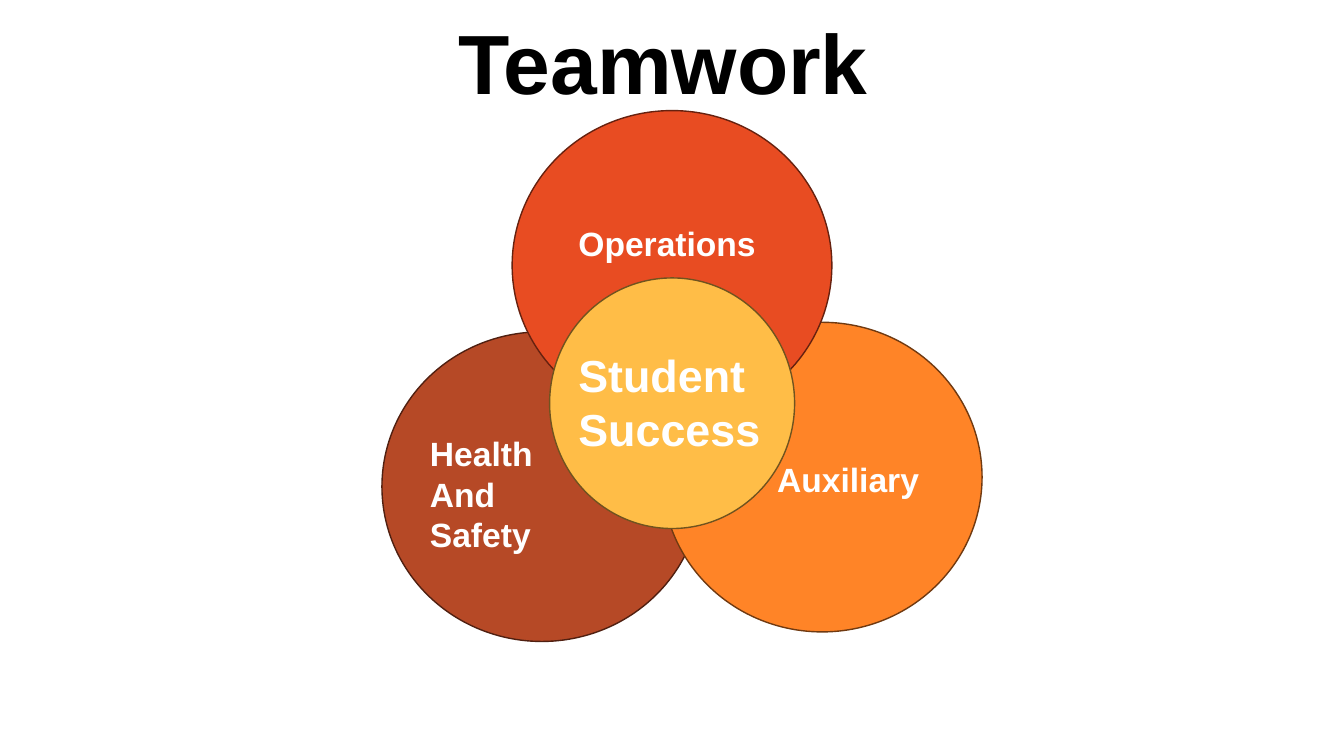
from dataclasses import dataclass

from pptx import Presentation
from pptx.dml.color import RGBColor
from pptx.enum.shapes import MSO_SHAPE
from pptx.enum.text import MSO_ANCHOR, PP_ALIGN
from pptx.util import Pt

OVAL = MSO_SHAPE.OVAL
TOP, MIDDLE = MSO_ANCHOR.TOP, MSO_ANCHOR.MIDDLE
LEFT, CENTER = PP_ALIGN.LEFT, PP_ALIGN.CENTER


@dataclass(frozen=True)
class Theme:
    font: str = "Arial"
    black: str = "000000"
    white: str = "FFFFFF"
    brown: tuple = ("B64926", "502011")
    orange: tuple = ("FF8427", "703A11")
    red: tuple = ("E84C22", "66210F")
    gold: tuple = ("FFBD47", "70531F")
    title: int = 60
    core: int = 32
    label: int = 24


theme = Theme()
deck = Presentation()
deck.slide_width, deck.slide_height = Pt(960), Pt(540)
slide = deck.slides.add_slide(deck.slide_layouts[6])


def add_text(text, box, size=theme.label, color=theme.white, align=LEFT,
             anchor=TOP, spacing=1.0):
    """Add a bold text box; each line of text becomes a paragraph."""
    frame = slide.shapes.add_textbox(*map(Pt, box)).text_frame
    frame.word_wrap = True
    frame.vertical_anchor = anchor
    frame.text = text
    for para in frame.paragraphs:
        para.alignment = align
        para.line_spacing = spacing
        para.font.name = theme.font
        para.font.size = Pt(size)
        para.font.bold = True
        para.font.color.rgb = RGBColor.from_string(color)


add_text("Teamwork", (0, 0.7, 947.5, 94.3), size=theme.title,
         color=theme.black, align=CENTER, anchor=MIDDLE, spacing=0.9)

# Circles from back to front
team = (228.4, 221.2)
circles = [
    ((272.8, 237), team, theme.brown),
    ((473.1, 230.2), team, theme.orange),
    ((365.8, 79), team, theme.red),
    ((392.6, 198.5), (175, 179), theme.gold),
]
for place, size, (fill, edge) in circles:
    circle = slide.shapes.add_shape(OVAL, *map(Pt, place + size))
    circle.shadow.inherit = False
    circle.fill.solid()
    circle.fill.fore_color.rgb = RGBColor.from_string(fill)
    circle.line.color.rgb = RGBColor.from_string(edge)
    circle.line.width = Pt(1)

add_text("Student Success", (406.1, 244.8, 148.3, 85), size=theme.core)
labels = [
    ("Health\nAnd\nSafety", (300, 306, 111, 94.5)),
    ("Auxiliary", (548, 324, 154, 36.4)),
    ("Operations", (406.1, 155.5, 175, 36.4)),
]
for text, box in labels:
    add_text(text, box)

deck.save("out.pptx")
